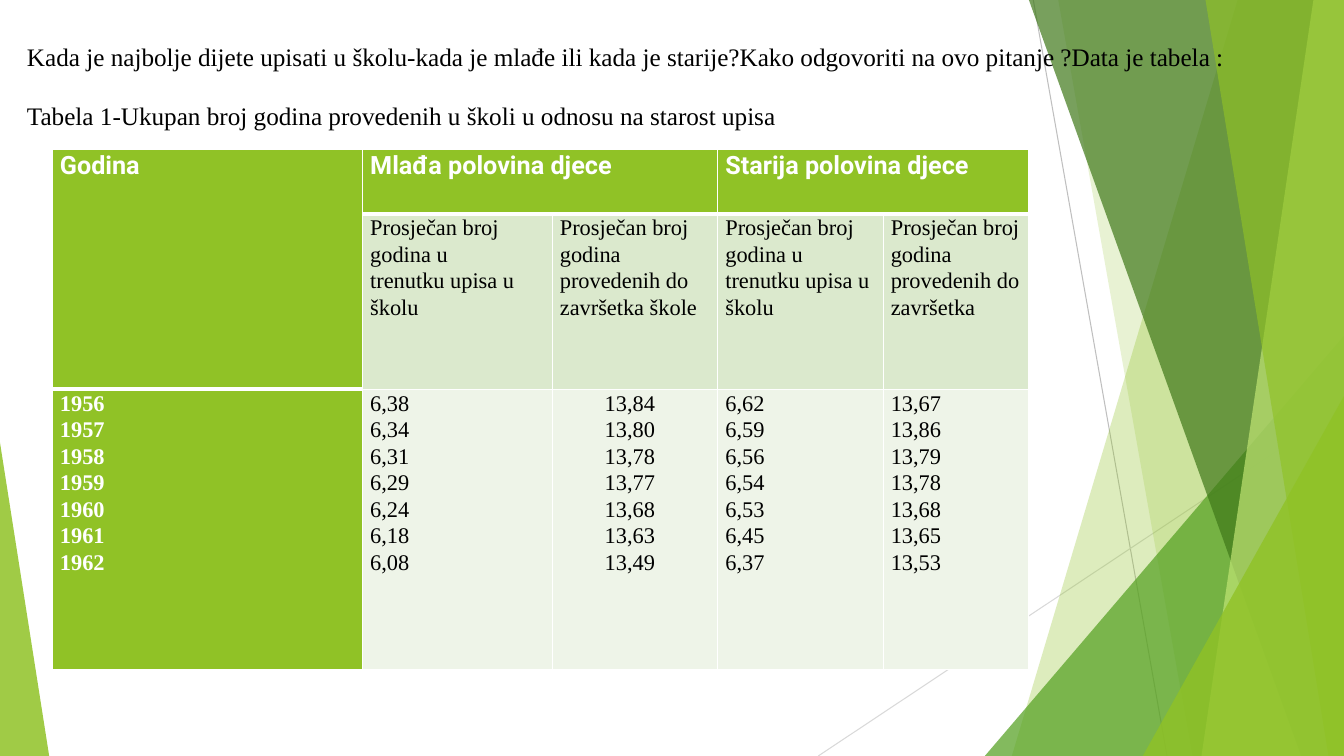
import pptx
import pptx.dml.color
import pptx.enum.shapes
import pptx.oxml.ns
import pptx.util
from lxml import etree
from pptx.util import Cm, Pt

COLORS = {
    "white": "FFFFFF", "black": "000000", "green": "90C226", "leaf": "54A021",
    "forest": "3F7819", "lime": "C0E474", "subheader": "DBE9CD",
    "values": "EEF4E8", "line_dark": "BFBFBF", "line_light": "D9D9D9",
}
WIDTH, HEIGHT = 33.87, 19.05


def rgb(name):
    return pptx.dml.color.RGBColor.from_string(COLORS[name])


def write_text(frame, lines, size=16, font="Times New Roman", color="black",
               bold=False, spacing=None, gap=0, indent=0):
    frame.word_wrap = True
    for index, line in enumerate(lines):
        paragraph = frame.add_paragraph() if index else frame.paragraphs[0]
        paragraph.line_spacing = spacing
        paragraph.space_before = Pt(gap if index else 0)
        if indent:
            properties = paragraph._p.get_or_add_pPr()
            properties.set("marL", str(Cm(indent)))
            properties.set("indent", "0")
        run = paragraph.add_run()
        run.text = line
        run.font.size = Pt(size)
        run.font.name = font
        run.font.bold = bold
        run.font.color.rgb = rgb(color)


presentation = pptx.Presentation()
presentation.slide_width = Cm(WIDTH)
presentation.slide_height = Cm(HEIGHT)
slide = presentation.slides.add_slide(presentation.slide_layouts[6])

# Thin background lines
for x1, y1, x2, y2, color in [
    (26.04, 0, 29.41, HEIGHT, "line_dark"),
    (WIDTH, 10.24, 20.62, HEIGHT, "line_light"),
]:
    connector = slide.shapes.add_connector(
        pptx.enum.shapes.MSO_CONNECTOR.STRAIGHT, Cm(x1), Cm(y1), Cm(x2), Cm(y2))
    connector.line.color.rgb = rgb(color)
    connector.line.width = Pt(0.75)
    etree.SubElement(connector.element.spPr, pptx.oxml.ns.qn("a:effectLst"))

# Facets: a strip (top x, bottom x) reaches the right edge,
# a triangle (left, top, width, apex) reaches the bottom edge
facets = [
    ((31.19, 25.5), "green", 30),
    ((26.67, 30.05), "green", 20),
    ((24.82, 8.46, 9.05, 1), "leaf", 72),
    ((25.93, 32.79), "forest", 70),
    ((33.1, 30.28), "lime", 70),
    ((30.38, 33.48), "green", 65),
    ((28.8, 9.98, 5.07, 1), "green", 80),
    ((0, 11.15, 1.24, 0), "green", 85),
]
for geometry, color, opacity in facets:
    if len(geometry) == 2:
        top_x, bottom_x = geometry
        builder = slide.shapes.build_freeform(Cm(top_x), Cm(0))
        builder.add_line_segments([(Cm(WIDTH), Cm(0)), (Cm(WIDTH), Cm(HEIGHT)),
                                   (Cm(bottom_x), Cm(HEIGHT))])
        shape = builder.convert_to_shape()
    else:
        left, top, width, apex = geometry
        shape = slide.shapes.add_shape(
            pptx.enum.shapes.MSO_SHAPE.ISOSCELES_TRIANGLE,
            Cm(left), Cm(top), Cm(width), Cm(HEIGHT - top))
        shape.adjustments[0] = apex
    shape.shadow.inherit = False
    shape.fill.solid()
    shape.fill.fore_color.rgb = rgb(color)
    shape.line.fill.background()
    fill_color = shape.element.spPr.find(".//" + pptx.oxml.ns.qn("a:srgbClr"))
    alpha = etree.SubElement(fill_color, pptx.oxml.ns.qn("a:alpha"))
    alpha.set("val", str(opacity * 1000))

# Question and table caption
heading = slide.shapes.add_textbox(Cm(0.43), Cm(0.91), Cm(33.44), Cm(3.33))
write_text(heading.text_frame, [
    "Kada je najbolje dijete upisati u školu-kada je mlađe ili kada je starije?"
    "Kako odgovoriti na ovo pitanje ?Data je tabela :",
    "Tabela 1-Ukupan broj godina provedenih u školi u odnosu na starost upisa",
], size=18, gap=21)

# Table grid
column_widths = [7.82, 4.78, 4.17, 4.17, 3.66]
row_heights = [1.63, 4.42, 7.06]
table = slide.shapes.add_table(3, 5, Cm(1.32), Cm(3.76), Cm(sum(column_widths)),
                               Cm(sum(row_heights))).table
for column, width in zip(table.columns, column_widths):
    column.width = Cm(width)
for row, height in zip(table.rows, row_heights):
    row.height = Cm(height)
table.cell(0, 0).merge(table.cell(1, 0))
table.cell(0, 1).merge(table.cell(0, 2))
table.cell(0, 3).merge(table.cell(0, 4))

# Cell borders, margins and fills
row_fills = ["green", "subheader", "values"]
for r in range(3):
    for c in range(5):
        cell = table.cell(r, c)
        cell.margin_left = cell.margin_right = Cm(0.19)
        cell.margin_top = cell.margin_bottom = 0
        above_thick_line = r == 0 or (r == 1 and c == 0)
        properties = cell._tc.get_or_add_tcPr()
        for side in "LRTB":
            weight = 3 if side == "B" and above_thick_line else 1
            border = etree.SubElement(properties, pptx.oxml.ns.qn("a:ln" + side))
            border.set("w", str(Pt(weight)))
            solid = etree.SubElement(border, pptx.oxml.ns.qn("a:solidFill"))
            etree.SubElement(solid, pptx.oxml.ns.qn("a:srgbClr")).set("val", COLORS["white"])
        cell.fill.solid()
        cell.fill.fore_color.rgb = rgb("green" if c == 0 else row_fills[r])

# Header texts
for c, title in [(0, "Godina"), (1, "Mlađa polovina djece"), (3, "Starija polovina djece")]:
    write_text(table.cell(0, c).text_frame, [title], size=18, font="Roboto",
               color="white", bold=True, spacing=1.07)
subheaders = [
    ["Prosječan broj", "godina u", "trenutku upisa u školu"],
    ["Prosječan broj godina provedenih do završetka škole"],
    ["Prosječan broj godina u trenutku upisa u školu"],
    ["Prosječan broj godina provedenih do završetka"],
]
for c, lines in enumerate(subheaders, start=1):
    write_text(table.cell(1, c).text_frame, lines, spacing=1.07)

# Yearly values
values = [
    [str(year) for year in range(1956, 1963)],
    ["6,38", "6,34", "6,31", "6,29", "6,24", "6,18", "6,08"],
    ["13,84", "13,80", "13,78", "13,77", "13,68", "13,63", "13,49"],
    ["6,62", "6,59", "6,56", "6,54", "6,53", "6,45", "6,37"],
    ["13,67", "13,86", "13,79", "13,78", "13,68", "13,65", "13,53"],
]
for c, lines in enumerate(values):
    write_text(table.cell(2, c).text_frame, lines, color="black" if c else "white",
               bold=c == 0, spacing=1.07, indent=1.13 if c == 2 else 0)

presentation.save("out.pptx")
